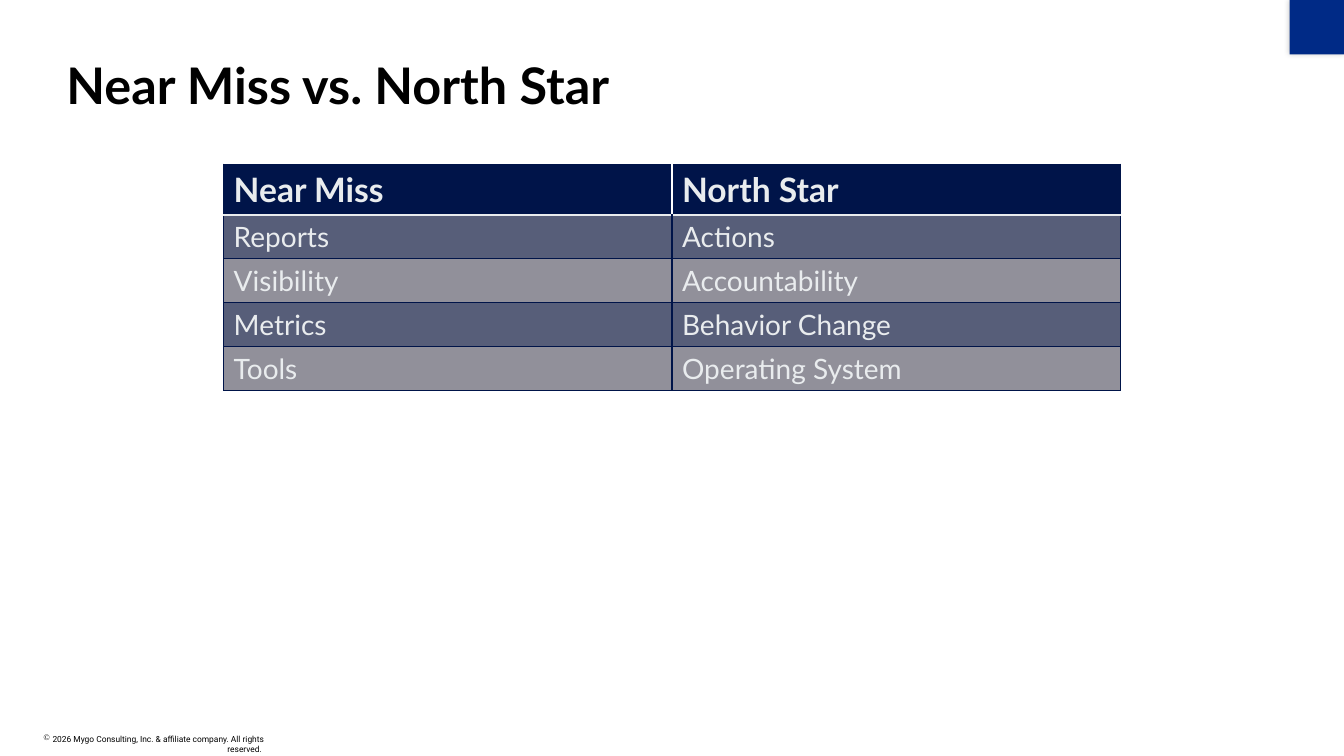
from dataclasses import dataclass

import lxml.etree
import pptx
import pptx.dml.color
import pptx.enum.shapes
import pptx.enum.text
import pptx.oxml
import pptx.oxml.ns
import pptx.util
from pptx.util import Inches

RGBColor = pptx.dml.color.RGBColor
BLACK = RGBColor(0x00, 0x00, 0x00)
CORNER_BLUE = RGBColor(0x00, 0x2A, 0x86)
NAVY = RGBColor(0x00, 0x14, 0x49)
SLATE = RGBColor(0x57, 0x5E, 0x79)
GRAY = RGBColor(0x91, 0x90, 0x9A)
PALE = RGBColor(0xE9, 0xEC, 0xEE)

TITLE_FONT = {"name": "Lato", "size": pptx.util.Pt(36), "bold": True}
HEADER_FONT = {"name": "Lato", "size": pptx.util.Pt(24), "bold": True}
ROW_FONT = {"name": "Lato", "size": pptx.util.Pt(20), "bold": False}
COPYRIGHT_FONT = {"name": "Roboto", "size": pptx.util.Pt(6), "bold": False}
FRAME = {
    "margin_left": 0, "margin_top": 0, "margin_right": 0, "margin_bottom": 0,
    "word_wrap": True,
    "auto_size": pptx.enum.text.MSO_AUTO_SIZE.NONE,
    "vertical_anchor": pptx.enum.text.MSO_ANCHOR.TOP,
}


@dataclass
class Comparison:
    near_miss: str
    north_star: str


@dataclass
class Border:
    side: str
    color: RGBColor
    points: float


COMPARISONS = [
    Comparison("Near Miss", "North Star"),
    Comparison("Reports", "Actions"),
    Comparison("Visibility", "Accountability"),
    Comparison("Metrics", "Behavior Change"),
    Comparison("Tools", "Operating System"),
]


def apply(target: object, values: dict) -> None:
    for key, value in values.items():
        setattr(target, key, value)


def style_font(font: pptx.text.text.Font, values: dict, color: RGBColor) -> None:
    apply(font, values)
    font.color.rgb = color


def place(shape: pptx.shapes.base.BaseShape, left: float, top: float,
          width: float, height: float) -> None:
    apply(shape, {"left": Inches(left), "top": Inches(top),
                  "width": Inches(width), "height": Inches(height)})


def add_border(cell: pptx.table._Cell, border: Border) -> None:
    line = pptx.oxml.parse_xml(
        f'<a:ln{border.side} {pptx.oxml.ns.nsdecls("a")} w="{pptx.util.Pt(border.points)}">'
        f'<a:solidFill><a:srgbClr val="{border.color}"/></a:solidFill></a:ln{border.side}>')
    cell._tc.get_or_add_tcPr().append(line)


def cell_borders(row: int, column: int) -> list[Border]:
    borders = [Border(side, NAVY, 1) for side in "LRTB"]
    if row == 0:
        borders[3] = Border("B", PALE, 1.5)
        del borders[1 - column]  # the header has no inner divider
    elif row == 1:
        borders[2] = Border("T", PALE, 1.5)
    return borders


def fill_cell(cell: pptx.table._Cell, text: str, row: int, column: int) -> None:
    for border in cell_borders(row, column):
        add_border(cell, border)
    cell.fill.solid()
    cell.fill.fore_color.rgb = NAVY if row == 0 else (SLATE if row % 2 else GRAY)
    cell.text = text
    style_font(cell.text_frame.paragraphs[0].runs[0].font,
               HEADER_FONT if row == 0 else ROW_FONT, PALE)


def add_comparison_table(slide: pptx.slide.Slide) -> None:
    table = slide.shapes.add_table(len(COMPARISONS), 2, Inches(2.22), Inches(1.63),
                                   Inches(8.9), Inches(2.22)).table
    for row, comparison in enumerate(COMPARISONS):
        table.rows[row].height = Inches(0.43 if row else 0.5)
        for column, text in enumerate((comparison.near_miss, comparison.north_star)):
            fill_cell(table.cell(row, column), text, row, column)


def add_corner(slide: pptx.slide.Slide) -> None:
    corner = slide.shapes.add_shape(pptx.enum.shapes.MSO_SHAPE.RECTANGLE,
                                    Inches(12.8), Inches(0), Inches(0.54), Inches(0.54))
    corner.shadow.inherit = False
    corner.fill.solid()
    corner.fill.fore_color.rgb = CORNER_BLUE
    corner.line.fill.background()
    effects = corner._element.spPr.find(pptx.oxml.ns.qn("a:effectLst"))
    effects.append(pptx.oxml.parse_xml(
        f'<a:outerShdw {pptx.oxml.ns.nsdecls("a")} blurRad="{pptx.util.Pt(4)}" dist="0" '
        'dir="2700000" rotWithShape="0"><a:srgbClr val="000000">'
        '<a:alpha val="20000"/></a:srgbClr></a:outerShdw>'))


def add_copyright(slide: pptx.slide.Slide) -> None:
    notice = slide.shapes.add_textbox(Inches(0.26), Inches(7.28), Inches(2.36), Inches(0.1))
    apply(notice.text_frame, FRAME)
    paragraph = notice.text_frame.paragraphs[0]
    paragraph.alignment = pptx.enum.text.PP_ALIGN.RIGHT
    properties = paragraph._p.get_or_add_pPr()
    properties.set("marL", str(Inches(0.09)))
    properties.set("indent", str(Inches(-0.09)))
    lxml.etree.SubElement(properties, pptx.oxml.ns.qn("a:buChar"), char="©")
    run = paragraph.add_run()
    run.text = "2026 Mygo Consulting, Inc. & affiliate company. All rights reserved. "
    style_font(run.font, COPYRIGHT_FONT, BLACK)


def main() -> None:
    deck = pptx.Presentation()
    apply(deck, {"slide_width": Inches(13.34), "slide_height": Inches(7.5)})
    slide = deck.slides.add_slide(deck.slide_layouts[5])

    # Copyright line
    add_copyright(slide)

    # Title
    title = slide.shapes.title
    place(title, 0.66, 0.54, 10.65, 0.61)
    title.text_frame.text = "Near Miss vs. North Star"
    apply(title.text_frame, FRAME)
    heading = title.text_frame.paragraphs[0]
    heading.alignment = pptx.enum.text.PP_ALIGN.LEFT
    style_font(heading.runs[0].font, TITLE_FONT, BLACK)

    # Corner block and comparison
    add_corner(slide)
    add_comparison_table(slide)

    deck.save("out.pptx")


if __name__ == "__main__":
    main()
